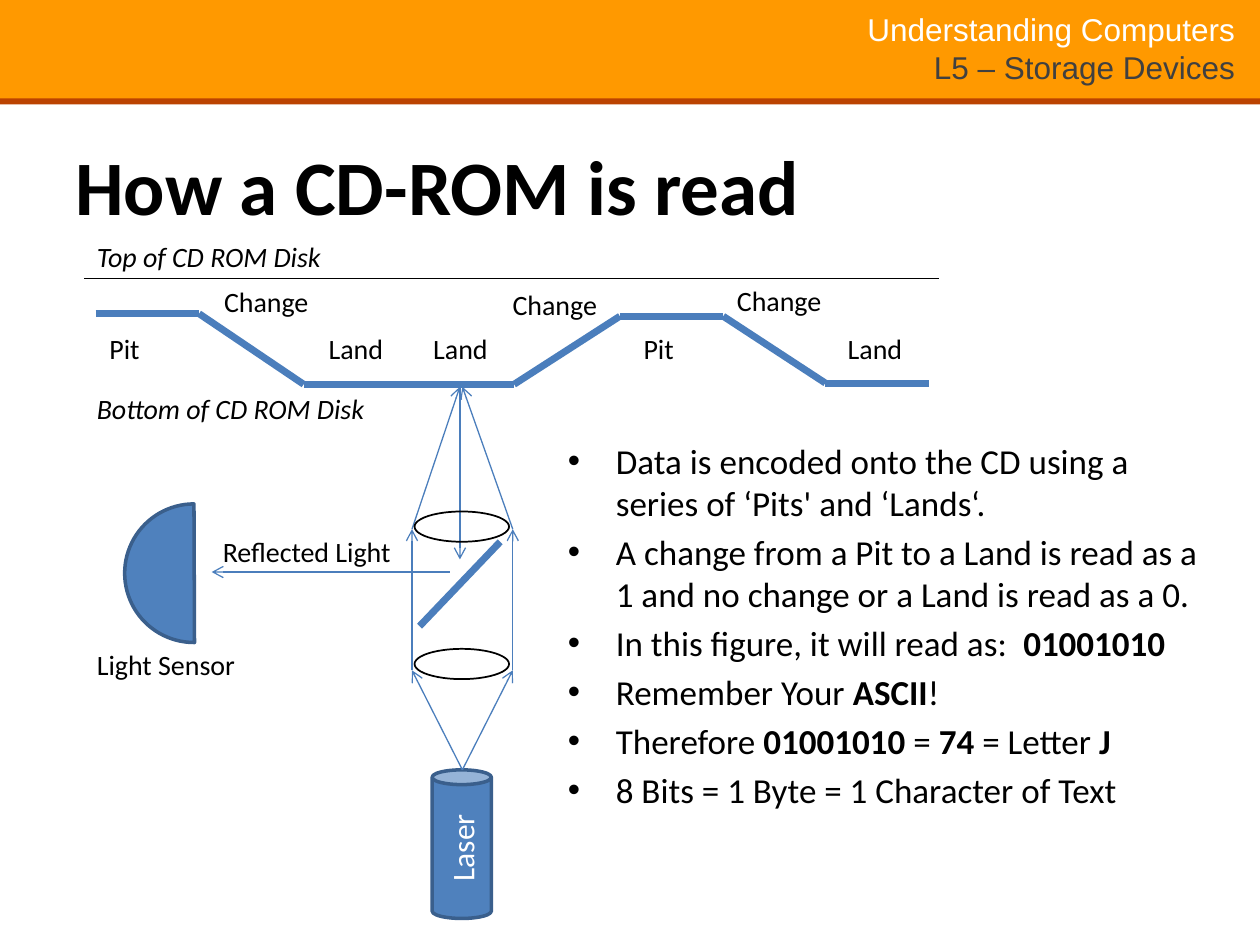
from itertools import pairwise
from lxml.etree import SubElement
from pptx import Presentation
from pptx.dml.color import RGBColor
from pptx.enum.shapes import MSO_CONNECTOR, MSO_SHAPE
from pptx.enum.text import PP_ALIGN
from pptx.oxml.ns import qn
from pptx.util import Inches, Pt

BLUE, EDGE, BEAM = "4F81BD", "3A5F8C", "4B7EBC"
BLACK, WHITE = "000000", "FFFFFF"

BANDS = [(0.77, 0.06, "BB4301"), (-0.01, 0.79, "FF9900")]
HEADER = [("Understanding Computers", WHITE), ("L5 – Storage Devices", "404040")]
TITLE = "How a CD-ROM is read"

# Text between ** marks is bold
POINTS = [
    "Data is encoded onto the CD using a series of ‘Pits' and ‘Lands‘.",
    "A change from a Pit to a Land is read as a 1 and no change or a Land is read as a 0.",
    "In this figure, it will read as:  **01001010**",
    "Remember Your **ASCII**!",
    "Therefore **01001010 **=** 74 **= Letter** J**",
    "8 Bits = 1 Byte = 1 Character of Text",
]

TRACK = [(0.76, 2.49), (1.58, 2.49), (2.41, 3.05), (3.24, 3.05), (4.08, 3.05),
         (4.92, 2.51), (5.74, 2.51), (6.55, 3.04), (7.37, 3.04)]
MIRROR = [(3.97, 4.3), (3.33, 4.97)]
LEFT, RIGHT = 3.27, 4.07
LENS, BASE, DISK, SOURCE = 4.2, 5.32, 3.07, (3.67, 6.11)
RAYS = [
    ((RIGHT, BASE), (RIGHT, LENS)),
    ((LEFT, BASE), (LEFT, LENS)),
    ((3.65, DISK), (3.65, 4.44)),
    ((3.57, 4.54), (1.68, 4.54)),
    (SOURCE, (RIGHT, BASE)),
    (SOURCE, (LEFT, BASE)),
    ((LEFT, LENS), (3.65, DISK)),
    ((RIGHT, LENS), (3.67, DISK)),
]

# Text, left, top, width, italic
LABELS = [
    ("Pit", 0.77, 2.58, 0.44, False),
    ("Change", 1.68, 2.21, 0.88, False),
    ("Change", 3.97, 2.23, 0.88, False),
    ("Change", 5.75, 2.2, 0.88, False),
    ("Land", 2.51, 2.58, 0.64, False),
    ("Land", 3.34, 2.58, 0.64, False),
    ("Pit", 5.01, 2.58, 0.44, False),
    ("Land", 6.63, 2.58, 0.64, False),
    ("Light Sensor", 0.67, 5.09, 1.31, False),
    ("Reflected Light", 1.67, 4.19, 1.55, False),
    ("Top of CD ROM Disk", 0.67, 1.85, 2.02, True),
    ("Bottom of CD ROM Disk", 0.67, 3.06, 2.38, True),
]

deck = Presentation()
deck.slide_width, deck.slide_height = Inches(10), Inches(7.5)
shapes = deck.slides.add_slide(deck.slide_layouts[6]).shapes


def paint(target, color):
    """Colour a fill solid."""
    target.solid()
    target.fore_color.rgb = RGBColor.from_string(color)


def style(font, size, color=BLACK, name="Calibri", bold=False, italic=False):
    font.size, font.name, font.bold, font.italic = Pt(size), name, bold, italic
    font.color.rgb = RGBColor.from_string(color)


def add_box(box, wrap=True):
    frame = shapes.add_textbox(*map(Inches, box)).text_frame
    frame.word_wrap = wrap
    return frame


def add_form(kind, box, fill=None, line=None, width=2):
    form = shapes.add_shape(kind, *map(Inches, box))
    form.shadow.inherit = False
    if fill:
        paint(form.fill, fill)
    else:
        form.fill.background()
    if line:
        paint(form.line.fill, line)
        form.line.width = Pt(width)
    else:
        form.line.fill.background()
    return form


def add_line(start, end, color=BEAM, width=0.75, arrow=False):
    line = shapes.add_connector(MSO_CONNECTOR.STRAIGHT, *map(Inches, start + end))
    paint(line.line.fill, color)
    line.line.width = Pt(width)
    props = line.element.spPr
    if arrow:
        SubElement(props.find(qn("a:ln")), qn("a:tailEnd"), type="arrow")
    SubElement(props, qn("a:effectLst"))


def add_bullet(para):
    props = para._p.get_or_add_pPr()
    props.set("marL", str(Inches(0.38)))
    props.set("indent", str(-Inches(0.38)))
    SubElement(props, qn("a:buFont"), typeface="Arial")
    SubElement(props, qn("a:buChar"), char="•")


# Header and title
for top, height, color in BANDS:
    add_form(MSO_SHAPE.RECTANGLE, (-0.04, top, 10.06, height), color)
para = add_box((4.99, 0.03, 4.91, 0.69)).paragraphs[0]
para.text = "\v".join(text for text, _ in HEADER)
para.alignment = PP_ALIGN.RIGHT
for run, (_, color) in zip(para.runs, HEADER):
    style(run.font, 18, color, "Arial")
frame = add_box((0.5, 1.05, 9, 1.25))
frame.text = TITLE
style(frame.paragraphs[0].runs[0].font, 44, bold=True)

# Bullet list
frame = add_box((4.41, 3.44, 5.23, 3.7))
for i, point in enumerate(POINTS):
    para = frame.add_paragraph() if i else frame.paragraphs[0]
    add_bullet(para)
    if i:
        para.space_before = Pt(4)
    for j, part in enumerate(point.split("**")):
        if part:
            run = para.add_run()
            run.text = part
            style(run.font, 20, bold=j % 2 == 1)

# Laser and sensor
laser = add_form(MSO_SHAPE.CAN, (3.43, 6.11, 0.47, 1.18), BLUE, EDGE)
laser.text_frame.text = "Laser"
laser.text_frame._txBody.bodyPr.set("vert", "vert270")
para = laser.text_frame.paragraphs[0]
para.alignment = PP_ALIGN.CENTER
style(para.runs[0].font, 18, WHITE)
sensor = add_form(MSO_SHAPE.CHORD, (0.99, 4, 1.1, 1.1), BLUE, EDGE)
sensor.adjustments[0], sensor.adjustments[1] = 53.73, 162

# Disk, mirror, rays and lenses
for start, end in [*pairwise(TRACK), MIRROR]:
    add_line(start, end, width=4)
for start, end in RAYS:
    add_line(start, end, arrow=True)
for top in (4.06, 5.15):
    add_form(MSO_SHAPE.OVAL, (3.29, top, 0.75, 0.24), line=BLACK, width=1)
add_line((0.67, 2.21), (7.45, 2.21), BLACK)

for text, left, top, width, italic in LABELS:
    frame = add_box((left, top, width, 0.37), wrap=False)
    frame.text = text
    style(frame.paragraphs[0].runs[0].font, 16, italic=italic)

deck.save("out.pptx")
